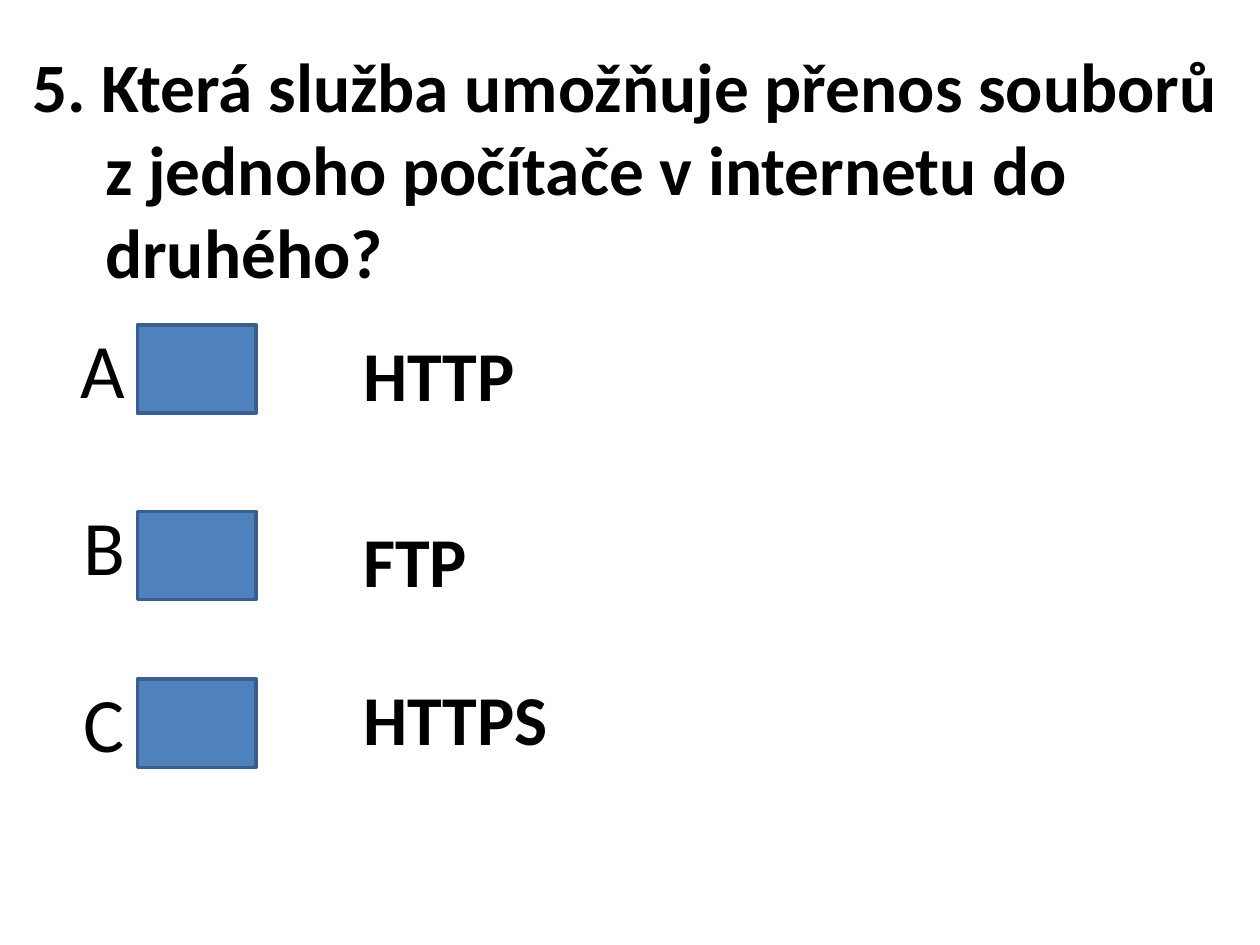
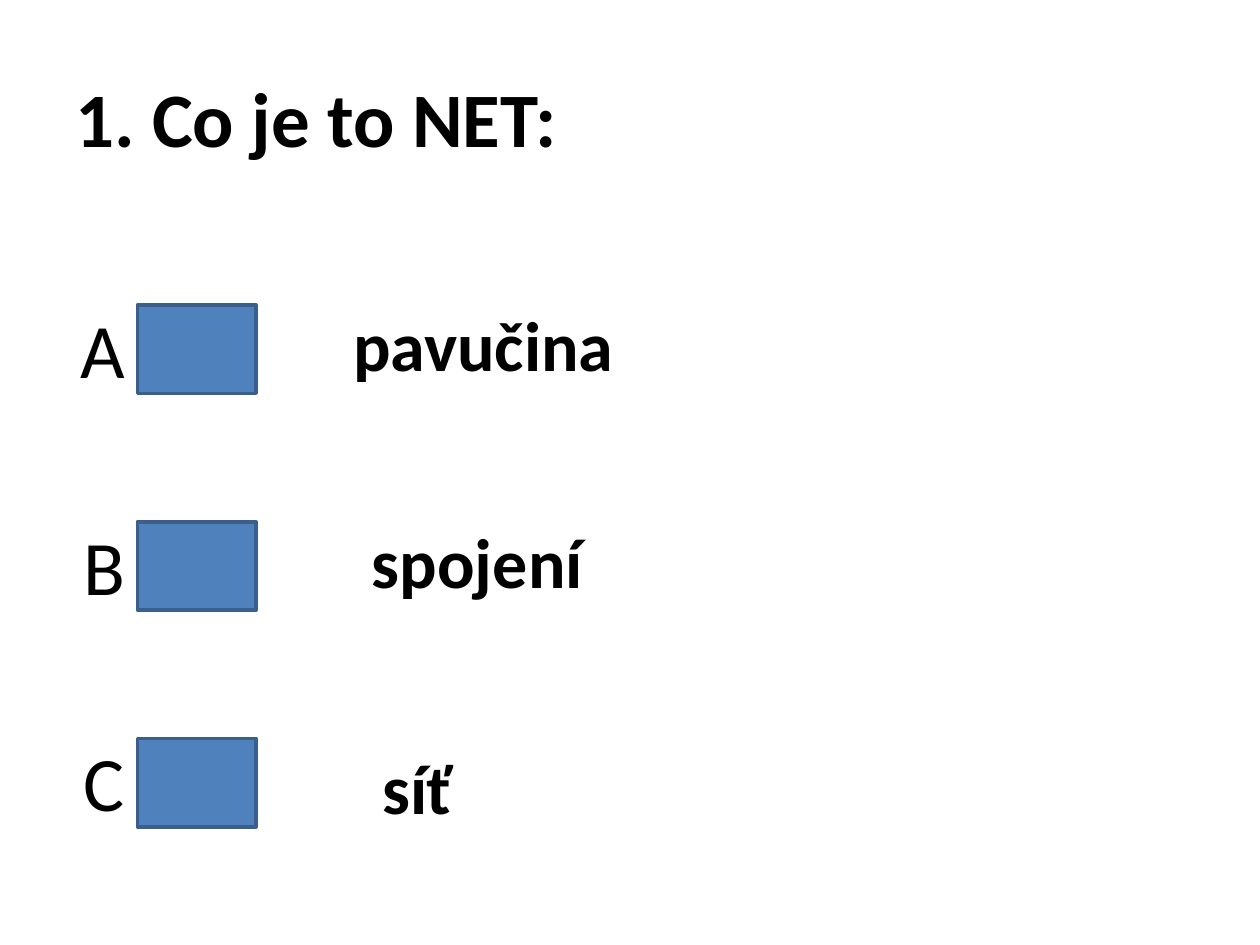
from dataclasses import dataclass

from pptx import Presentation
from pptx.dml.color import RGBColor
from pptx.enum.shapes import MSO_SHAPE as Preset
from pptx.enum.text import MSO_ANCHOR as Anchor, MSO_AUTO_SIZE as AutoSize, PP_ALIGN as Align
from pptx.slide import Slide
from pptx.util import Cm, Pt


@dataclass(frozen=True)
class Theme:
    font: str = "Calibri"
    ink: RGBColor = RGBColor(0, 0, 0)
    button: RGBColor = RGBColor(0x4F, 0x81, 0xBD)
    button_edge: RGBColor = RGBColor(0x3A, 0x5F, 0x8C)
    edge_width: float = 2
    letter_size: float = 44
    answer_size: float = 40


@dataclass(frozen=True)
class Box:
    """Left, top, width and height in centimetres."""
    left: float
    top: float
    width: float
    height: float

    def lengths(self) -> tuple[Cm, ...]:
        return Cm(self.left), Cm(self.top), Cm(self.width), Cm(self.height)


@dataclass(frozen=True)
class Question:
    text: str
    box: Box
    size: float
    hanging: float


@dataclass(frozen=True)
class Choice:
    letter: str
    answer: str
    letter_top: float
    button_top: float
    answer_box: Box


THEME = Theme()
LETTER_WIDTH, LETTER_HEIGHT = 2.77, 2.13
BUTTON_WIDTH, BUTTON_HEIGHT = 2.39, 1.78
ANSWER_HEIGHT, ANSWER_INSET = 1.96, 0.57

# Second quiz: evenly spaced rows
NET_TOP, NET_STEP, BUTTON_DROP = 5.95, 4.37, 0.2
NET_ANSWERS = [
    ("A", "pavučina", Box(6.55, 5.95, 9.32, ANSWER_HEIGHT)),
    ("B", "spojení", Box(6.93, 10.32, 9.32, ANSWER_HEIGHT)),
    ("C", "síť", Box(7.14, 14.88, 12.29, ANSWER_HEIGHT)),
]

QUIZ = [
    (
        Question(
            "5. Která služba umožňuje přenos souborů z jednoho počítače v internetu do druhého?",
            Box(0.4, 0.79, 25, 5.18), 39.6, 1.47,
        ),
        [
            Choice("A", "HTTP", 6.35, 6.55, Box(6.75, 6.55, 3.97, ANSWER_HEIGHT)),
            Choice("B", "FTP", 9.93, 10.31, Box(6.75, 10.31, 3.97, ANSWER_HEIGHT)),
            Choice("C", "HTTPS", 13.49, 13.69, Box(6.75, 13.49, 5.95, ANSWER_HEIGHT)),
        ],
    ),
    (
        Question("1. Co je to NET:", Box(1.27, 0.76, 22.86, 3.18), 44, 2.26),
        [
            Choice(letter, answer, NET_TOP + row * NET_STEP,
                   NET_TOP + row * NET_STEP + BUTTON_DROP, box)
            for row, (letter, answer, box) in enumerate(NET_ANSWERS)
        ],
    ),
]


def add_text(slide: Slide, text: str, box: Box, size: float, bold: bool = True,
             align: Align = Align.LEFT, **frame_format):
    frame = slide.shapes.add_textbox(*box.lengths()).text_frame
    for name, value in {"word_wrap": True, **frame_format}.items():
        setattr(frame, name, value)
    paragraph = frame.paragraphs[0]
    paragraph.alignment = align
    run = paragraph.add_run()
    run.text = text
    font_format = {"name": THEME.font, "size": Pt(size), "bold": bold}
    for name, value in font_format.items():
        setattr(run.font, name, value)
    run.font.color.rgb = THEME.ink
    return paragraph


def add_question(slide: Slide, question: Question) -> None:
    paragraph = add_text(slide, question.text, question.box, question.size,
                         vertical_anchor=Anchor.MIDDLE)
    # Hanging indent for the question number
    properties = paragraph._p.get_or_add_pPr()
    indent = Cm(question.hanging)
    for name, value in {"marL": indent, "indent": -indent}.items():
        properties.set(name, str(int(value)))


def add_button(slide: Slide, box: Box) -> None:
    button = slide.shapes.add_shape(Preset.ACTION_BUTTON_CUSTOM, *box.lengths())
    button.shadow.inherit = False
    button.fill.solid()
    button.fill.fore_color.rgb = THEME.button
    button.line.color.rgb = THEME.button_edge
    button.line.width = Pt(THEME.edge_width)


def add_choice(slide: Slide, choice: Choice) -> None:
    add_button(slide, Box(LETTER_WIDTH, choice.button_top, BUTTON_WIDTH, BUTTON_HEIGHT))
    add_text(slide, choice.letter, Box(0, choice.letter_top, LETTER_WIDTH, LETTER_HEIGHT),
             THEME.letter_size, bold=False, align=Align.RIGHT,
             auto_size=AutoSize.SHAPE_TO_FIT_TEXT)
    add_text(slide, choice.answer, choice.answer_box, THEME.answer_size,
             margin_left=Cm(ANSWER_INSET), auto_size=AutoSize.SHAPE_TO_FIT_TEXT)


def main() -> None:
    deck = Presentation()
    for name, value in {"slide_width": Cm(25.4), "slide_height": Cm(19.05)}.items():
        setattr(deck, name, value)
    blank = deck.slide_layouts[6]
    for question, choices in QUIZ:
        slide = deck.slides.add_slide(blank)
        add_question(slide, question)
        for choice in choices:
            add_choice(slide, choice)
    deck.save("out.pptx")


if __name__ == "__main__":
    main()
